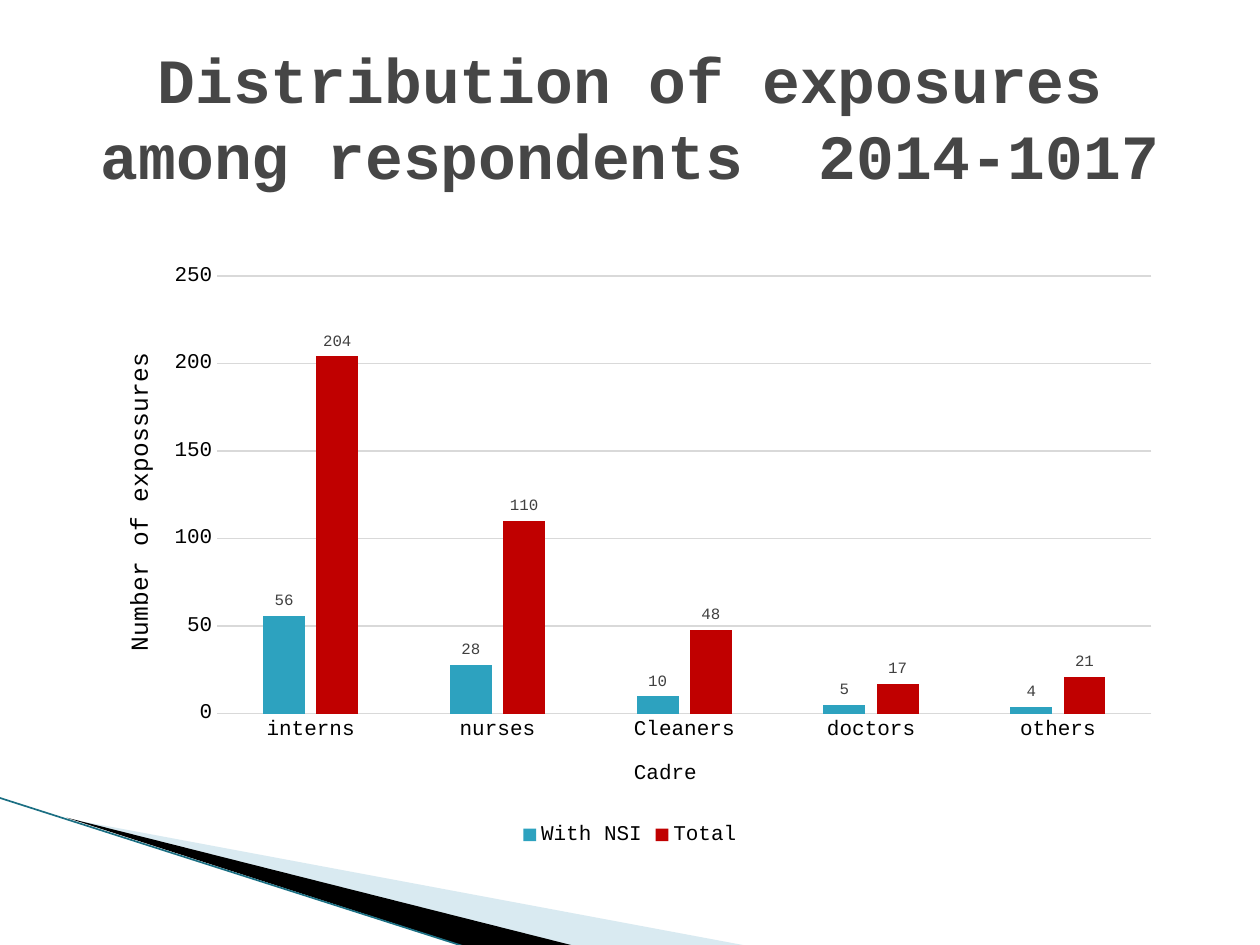
"""Build the slide on exposures among respondents by cadre."""
from lxml import etree
from pptx import Presentation
from pptx.chart.data import CategoryChartData
from pptx.dml.color import RGBColor
from pptx.enum.chart import XL_CHART_TYPE, XL_LABEL_POSITION, XL_LEGEND_POSITION, XL_TICK_MARK
from pptx.enum.shapes import MSO_CONNECTOR
from pptx.enum.text import MSO_ANCHOR, PP_ALIGN
from pptx.oxml.ns import qn
from pptx.util import Inches, Pt

COLORS = {"title": "464646", "text": "000000", "label": "404040", "grid": "D9D9D9",
          "nsi": "2DA2BF", "total": "C00000", "pale": "A0CBDC", "black": "000000",
          "edge": "1B6F83"}
FONT = "Courier New"


def style(font, size, color, bold=False):
    font.name, font.size, font.bold = FONT, Pt(size), bold
    font.color.rgb = RGBColor.from_string(COLORS[color])


def place(parent, index, **values):
    for old in parent.findall(qn("c:layout")):
        parent.remove(old)
    layout = etree.Element(qn("c:layout"))
    manual = etree.SubElement(layout, qn("c:manualLayout"))
    for tag, value in values.items():
        etree.SubElement(manual, qn(f"c:{tag}")).set("val", str(value))
    parent.insert(index, layout)


prs = Presentation()
prs.slide_width, prs.slide_height = Inches(10), Inches(7.5)
s = prs.slides.add_slide(prs.slide_layouts[6])

wedges = [
    ("pale", 40, [(0.55, 6.5), (5.95, 7.51), (4.56, 7.51)]),
    ("black", 100, [(0.53, 6.49), (4.57, 7.51), (3.72, 7.52)]),
]
for color, opacity, points in wedges:
    corners = [(Inches(x), Inches(y)) for x, y in points]
    builder = s.shapes.build_freeform(*corners[0])
    builder.add_line_segments(corners[1:])
    sp = builder.convert_to_shape()
    sp.shadow.inherit = False
    sp.fill.solid()
    sp.fill.fore_color.rgb = RGBColor.from_string(COLORS[color])
    sp.line.fill.background()
    if opacity < 100:
        clr = sp.fill._xPr.find(qn("a:solidFill"))[0]
        etree.SubElement(clr, qn("a:alpha")).set("val", str(opacity * 1000))

edge = s.shapes.add_connector(MSO_CONNECTOR.STRAIGHT, Inches(-0.01), Inches(6.33),
                              Inches(3.71), Inches(7.52))
edge.line.color.rgb = RGBColor.from_string(COLORS["edge"])
edge.line.width = Pt(0.95)
etree.SubElement(edge._element.spPr, qn("a:effectLst"))

title = s.shapes.add_textbox(Inches(0.5), Inches(0.3), Inches(9), Inches(1.25))
tf = title.text_frame
tf.word_wrap = True
tf.vertical_anchor = MSO_ANCHOR.MIDDLE
p = tf.paragraphs[0]
p.text = "Distribution of exposures among respondents  2014-1017"
p.alignment = PP_ALIGN.CENTER
style(p.runs[0].font, 36, "title", True)

data = CategoryChartData()
data.categories = ["interns", "nurses", "Cleaners", "doctors", "others"]
data.add_series("With NSI", [56, 28, 10, 5, 4])
data.add_series("Total", [204, 110, 48, 17, 21])
chart = s.shapes.add_chart(XL_CHART_TYPE.COLUMN_CLUSTERED, Inches(0.69), Inches(2),
                           Inches(8.62), Inches(4.76), data).chart
style(chart.font, 10, "text")
chart.has_title = False
chart.has_legend = True
chart.legend.position = XL_LEGEND_POSITION.BOTTOM
chart.legend.include_in_layout = False
style(chart.legend.font, 12, "text")

plot = chart.plots[0]
plot.gap_width, plot.overlap = 219, -27
plot.vary_by_categories = False
for series, color in zip(plot.series, ("nsi", "total")):
    series.format.fill.solid()
    series.format.fill.fore_color.rgb = RGBColor.from_string(COLORS[color])
    labels = series.data_labels
    labels.show_value = True
    labels.position = XL_LABEL_POSITION.OUTSIDE_END
    style(labels.font, 9, "label")

cat, val = chart.category_axis, chart.value_axis
axes = [(cat, "Cadre", 12, 0.5, 0.84), (val, "Number of expossures", 14, 0.03, 0.16)]
for axis, text, size, x, y in axes:
    axis.major_tick_mark = axis.minor_tick_mark = XL_TICK_MARK.NONE
    style(axis.tick_labels.font, 12, "text")
    tf = axis.axis_title.text_frame
    tf.text = text
    style(tf.paragraphs[0].runs[0].font, size, "text")
    place(axis.axis_title._element, 1, xMode="edge", yMode="edge", x=x, y=y)
val.minimum_scale, val.maximum_scale, val.major_unit = 0, 250, 50
val.format.line.fill.background()
for line in (cat.format.line, val.major_gridlines.format.line):
    line.color.rgb = RGBColor.from_string(COLORS["grid"])
    line.width = Pt(0.75)
place(chart._chartSpace.chart.plotArea, 0, layoutTarget="inner", xMode="edge",
      yMode="edge", x=0.12, y=0.04, w=0.86, h=0.73)

prs.save("out.pptx")
